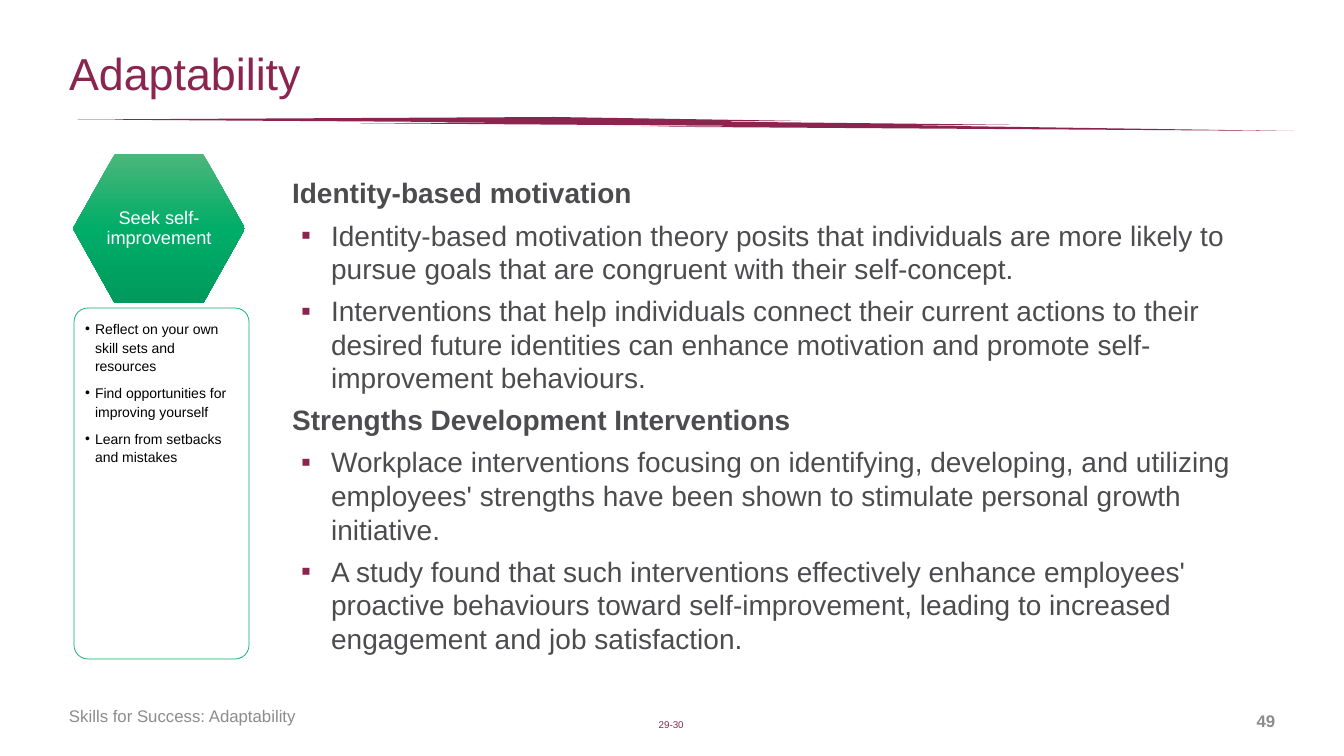
from copy import deepcopy

from lxml import etree
from pptx import Presentation
from pptx.dml import color
from pptx.enum import shapes, text
from pptx.oxml import ns
from pptx import util as u

EMU_PER_PX = 914400 / 100.8
COLORS = {
    "plum": "8B254F", "body": "4C4C4F", "muted": "8C8C8C",
    "light": "4BB67A", "green": "00AD68", "dark": "009A5C",
    "white": "FFFFFF", "black": "000000",
}
LEFT, CENTER, RIGHT = text.PP_ALIGN.LEFT, text.PP_ALIGN.CENTER, text.PP_ALIGN.RIGHT
TOP, MIDDLE, BOTTOM = text.MSO_ANCHOR.TOP, text.MSO_ANCHOR.MIDDLE, text.MSO_ANCHOR.BOTTOM
KINDS = shapes.MSO_SHAPE


def px(*lengths):
    return [u.Emu(round(length * EMU_PER_PX)) for length in lengths]


def write(box, content, size=12, fill="body", bold=False, align=LEFT, anchor=MIDDLE,
          margins=(0, 0), wrap=True, spacing=None, gap=0, level=0, indent=0,
          hanging=0, bullet=None, bullet_fill="black"):
    frame = box.text_frame
    frame.auto_size = text.MSO_AUTO_SIZE.NONE
    frame.word_wrap = wrap
    frame.vertical_anchor = anchor
    frame.margin_left, frame.margin_top = px(*margins)
    frame.margin_right, frame.margin_bottom = px(*margins)
    first = not frame.text
    para = frame.paragraphs[0] if first else frame.add_paragraph()
    para.level = level
    para.alignment = align
    para.line_spacing = spacing
    para.space_before = u.Pt(0 if first else gap)
    para.space_after = u.Pt(gap)
    props = para._p.get_or_add_pPr()
    for name, length in zip(("marL", "indent"), px(indent, -hanging)):
        props.set(name, str(length))
    if bullet:
        tint = etree.SubElement(props, ns.qn("a:buClr"))
        etree.SubElement(tint, ns.qn("a:srgbClr"), val=COLORS[bullet_fill])
        etree.SubElement(props, ns.qn("a:buFont"), typeface="Arial")
        etree.SubElement(props, ns.qn("a:buChar"), char=bullet)
    else:
        etree.SubElement(props, ns.qn("a:buNone"))
    span = para.add_run()
    span.text = content
    span.font.name = "Arial"
    span.font.size = u.Pt(size)
    span.font.bold = bold
    span.font.color.rgb = color.RGBColor.from_string(COLORS[fill])


deck = Presentation()
deck.slide_width, deck.slide_height = u.Inches(13.33), u.Inches(7.5)
page = deck.slides.add_slide(deck.slide_layouts[1])

title = page.shapes.title
title.left, title.top, title.width, title.height = px(69, 40, 1206, 72)
write(title, "Adaptability", size=32, fill="plum", spacing=0.9)

body = page.placeholders[1]
body.left, body.top, body.width, body.height = px(292, 151, 983, 529)
sections = {
    "Identity-based motivation": [
        "Identity-based motivation theory posits that individuals are more likely to pursue goals that are congruent with their self-concept.",
        "Interventions that help individuals connect their current actions to their desired future identities can enhance motivation and promote self-improvement behaviours.",
    ],
    "Strengths Development Interventions": [
        "Workplace interventions focusing on identifying, developing, and utilizing employees' strengths have been shown to stimulate personal growth initiative.",
        "A study found that such interventions effectively enhance employees' proactive behaviours toward self-improvement, leading to increased engagement and job satisfaction.",
    ],
}
for heading, points in sections.items():
    write(body, heading, size=20, bold=True, spacing=u.Pt(24), gap=3)
    for point in points:
        write(body, point, size=20, spacing=u.Pt(24), gap=3, level=2,
              indent=39, hanging=30, bullet="▪", bullet_fill="plum")

rule, hexagon, card, badge = [
    page.shapes.add_shape(kind, *px(*area)) for kind, area in (
        (KINDS.LIGHTNING_BOLT, (77, 117, 1216, 14)),
        (KINDS.HEXAGON, (73, 154, 172, 149)),
        (KINDS.ROUNDED_RECTANGLE, (74, 308, 175, 351)),
        (KINDS.DIAMOND, (643, 709, 56, 35)),
    )
]
for shape, fill in ((rule, "plum"), (hexagon, "green"), (card, "white"), (badge, "white")):
    shape.shadow.inherit = False
    shape.fill.solid()
    shape.fill.fore_color.rgb = color.RGBColor.from_string(COLORS[fill])
    shape.line.fill.background()

hexagon.adjustments[0] = 0.28
hexagon.fill.gradient()
hexagon.fill.gradient_angle = 270
first_stop = hexagon._element.spPr.find(".//" + ns.qn("a:gs"))
first_stop.addnext(deepcopy(first_stop))
for stop, position, fill in zip(hexagon.fill.gradient_stops, (0, 0.5, 1), ("light", "green", "dark")):
    stop.position = position
    stop.color.rgb = color.RGBColor.from_string(COLORS[fill])
write(hexagon, "Seek self-improvement", size=13, fill="white", align=CENTER,
      margins=(2, 2), spacing=0.9)

card.adjustments[0] = 0.08
card.line.width = u.Pt(0.5)
card.line.color.rgb = color.RGBColor.from_string(COLORS["green"])
card_fill = card._element.spPr.find(ns.qn("a:solidFill"))
etree.SubElement(card_fill[0], ns.qn("a:alpha"), val="90000")
for tip in (
    "Reflect on your own skill sets and resources",
    "Find opportunities for improving yourself",
    "Learn from setbacks and mistakes",
):
    write(card, tip, size=10, fill="black", anchor=TOP, margins=(7, 7), spacing=1.1,
          gap=3, level=1, indent=10, hanging=10, bullet="•")

write(badge, "29-30", size=7, fill="plum", align=CENTER, anchor=BOTTOM,
      margins=(0, 5), wrap=False)

footer = page.shapes.add_textbox(*px(69, 696, 459, 40))
write(footer, "Skills for Success: Adaptability", fill="muted", margins=(0, 5))
number = page.shapes.add_textbox(*px(1135, 701, 140, 40))
write(number, "49", fill="muted", bold=True, align=RIGHT, margins=(0, 5))

deck.save("out.pptx")
